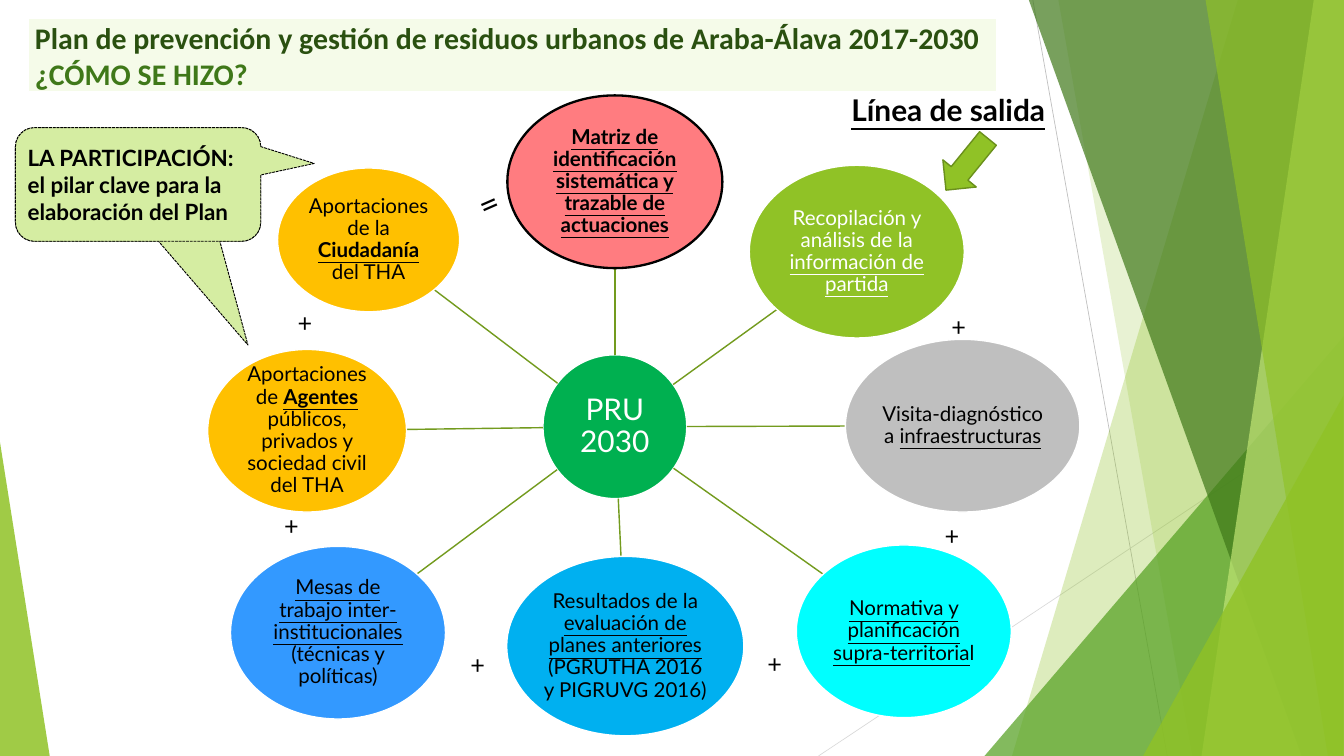
from math import hypot
from typing import NamedTuple

from lxml.etree import SubElement
from pptx import Presentation
from pptx.dml.color import RGBColor
from pptx.enum.dml import MSO_LINE
from pptx.enum.shapes import MSO_CONNECTOR, MSO_SHAPE
from pptx.enum.text import MSO_ANCHOR, MSO_AUTO_SIZE, PP_ALIGN
from pptx.oxml.ns import qn
from pptx.util import Inches, Pt

LIME, BLACK, WHITE = "90C226", "000000", "FFFFFF"


class Node(NamedTuple):
    """An ellipse; runs are (text, style), with b for bold and u for underline."""
    box: tuple
    fill: str
    runs: list
    ink: str = BLACK
    edge: str = WHITE
    width: float = 1.5
    size: int = 22


class Facet(NamedTuple):
    """A translucent part of the backdrop: outline points, or a triangle box."""
    points: list
    fill: str
    alpha: int
    apex: float = -1


HUB = Node((8.08, 5.28, 2.14, 2.14), "00B050", [("PRU 2030", "")], WHITE, size=32)
NODES = [
    Node((7.55, 1.42, 3.2, 2.57), "FF7C80",
         [("Matriz de identificación sistemática y trazable de actuaciones", "bu")],
         edge=BLACK, width=2.5),
    Node((11.15, 2.46, 3.2, 2.57), LIME,
         [("Recopilación y análisis de la ", ""), ("información de partida", "u")], WHITE),
    Node((12.58, 5.05, 3.49, 2.57), "BFBFBF",
         [("Visita-diagnóstico a ", ""), ("infraestructuras", "u")]),
    Node((11.85, 8.11, 3.2, 2.57), "00FFFF",
         [("Normativa y planificación supra-territoria", "u"), ("l", "")]),
    Node((7.54, 8.28, 3.53, 2.67), "00B0F0",
         [("Resultados de la ", ""), ("evaluación de planes anteriores ", "u"),
          ("(PGRUTHA 2016 y PIGRUVG 2016)", "")]),
    Node((3.09, 5.2, 2.96, 2.42), "FFC000",
         [("Aportaciones de ", ""), ("Agentes", "bu"),
          (" públicos, privados y sociedad civil del THA", "")]),
    Node((4.13, 2.5, 2.71, 2.14), "FFC000",
         [("Aportaciones de la ", ""), ("Ciudadanía", "bu"), (" del THA", "")]),
    Node((3.43, 8.13, 3.2, 2.57), "3399FF",
         [("Mesas de trabajo inter-institucionales ", "u"), ("(técnicas y políticas)", "")]),
]
FACETS = [
    Facet([(18.42, 0), (20, 0), (20, 11.25), (15.06, 11.25)], LIME, 30),
    Facet([(15.75, 0), (20, 0), (20, 11.25), (17.74, 11.25)], LIME, 20),
    Facet([14.65, 5, 5.35, 6.25], "54A021", 72, 1),
    Facet([(15.31, 0), (20, 0), (20, 11.25), (19.37, 11.25)], "3F7819", 70),
    Facet([(19.55, 0), (20, 0), (20, 11.25), (17.88, 11.25)], "C0E474", 70),
    Facet([(17.94, 0), (20, 0), (20, 11.25), (19.76, 11.25)], LIME, 65),
    Facet([17.01, 5.89, 2.98, 5.36], LIME, 80, 1),
    Facet([0, 6.58, 0.74, 4.67], LIME, 85, 0),
]
PLUSES = [(14.06, 4.58), (13.96, 7.69), (11.32, 9.6), (6.9, 9.62), (4.13, 7.55), (4.33, 4.53)]


def rgb(code: str) -> RGBColor:
    return RGBColor.from_string(code)


def paint(shape, fill: str, edge: str = "", width: float = 1.5, alpha: int = 100):
    shape.shadow.inherit = False
    shape.fill.solid()
    shape.fill.fore_color.rgb = rgb(fill)
    if alpha < 100:
        tone = shape.fill._xPr.find(qn("a:solidFill"))[0]
        SubElement(tone, qn("a:alpha")).set("val", str(alpha * 1000))
    if edge:
        shape.line.color.rgb = rgb(edge)
        shape.line.width = Pt(width)
    else:
        shape.line.fill.background()
    return shape


def write(shape, *paras, size=22, ink=BLACK, font="Lato", align=PP_ALIGN.LEFT,
          anchor=MSO_ANCHOR.TOP, inset=None, space=None, wrap=True):
    """Fill a shape with paragraphs, each a list of (text, style[, colour]) runs."""
    frame = shape.text_frame
    frame.word_wrap, frame.vertical_anchor = wrap, anchor
    frame.auto_size = MSO_AUTO_SIZE.NONE
    if inset is not None:
        frame.margin_left, frame.margin_top, frame.margin_right, frame.margin_bottom = map(
            Inches, inset)
    for i, runs in enumerate(paras):
        para = frame.add_paragraph() if i else frame.paragraphs[0]
        para.alignment = align
        if space:
            para.line_spacing = space
        for text, style, *tone in runs:
            run = para.add_run()
            run.text = text
            run.font.name, run.font.size = font, Pt(size)
            run.font.bold, run.font.underline = "b" in style, "u" in style
            run.font.color.rgb = rgb(tone[0] if tone else ink)


def add(shapes, kind, box: tuple, *adjust: float):
    shape = shapes.add_shape(kind, *map(Inches, box))
    for i, value in enumerate(adjust):
        shape.adjustments[i] = value
    return shape


def label(shapes, text: str, box: tuple, size: int, style="", turn=0.0, wrap=False):
    area = shapes.add_textbox(*map(Inches, box))
    area.rotation = turn
    write(area, [(text, style)], size=size, wrap=wrap)


def link(shapes, start: tuple, end: tuple, tone: str, width: float):
    line = shapes.add_connector(MSO_CONNECTOR.STRAIGHT, *map(Inches, start + end))
    line.line.color.rgb = rgb(tone)
    line.line.width = Pt(width)
    SubElement(line._element.spPr, qn("a:effectLst"))


def rim(node: Node, goal: Node) -> tuple:
    """Point of a node's edge on the way to the centre of another."""
    x, y, w, h = node.box
    left, top, wide, high = goal.box
    cx, cy = x + w / 2, y + h / 2
    dx, dy = left + wide / 2 - cx, top + high / 2 - cy
    part = 1 / hypot(dx / (w / 2), dy / (h / 2))
    return cx + dx * part, cy + dy * part


def draw_facet(shapes, facet: Facet):
    if facet.apex >= 0:
        shape = add(shapes, MSO_SHAPE.ISOSCELES_TRIANGLE, facet.points, facet.apex)
    else:
        first, *rest = [(Inches(x), Inches(y)) for x, y in facet.points]
        pen = shapes.build_freeform(*first)
        pen.add_line_segments(rest, close=True)
        shape = pen.convert_to_shape()
    paint(shape, facet.fill, alpha=facet.alpha)


def draw_node(shapes, node: Node):
    shape = paint(add(shapes, MSO_SHAPE.OVAL, node.box), node.fill, node.edge, node.width)
    write(shape, node.runs, size=node.size, ink=node.ink, align=PP_ALIGN.CENTER,
          anchor=MSO_ANCHOR.MIDDLE, inset=(0.02,) * 4, space=0.9)


def callout(shapes, *adjust: float):
    shape = add(shapes, MSO_SHAPE.ROUNDED_RECTANGULAR_CALLOUT, (0.23, 1.9, 3.65, 1.69), *adjust)
    paint(shape, "D5EDA2", BLACK, 1)
    shape.line.dash_style = MSO_LINE.SQUARE_DOT
    return shape


def main():
    deck = Presentation()
    deck.slide_width, deck.slide_height = Inches(20), Inches(11.25)
    slide = deck.slides.add_slide(deck.slide_layouts[5])
    shapes = slide.shapes

    # Backdrop
    link(shapes, (15.37, 0), (17.37, 11.25), "BFBFBF", 0.75)
    link(shapes, (20, 6.04), (12.18, 11.25), "D9D9D9", 0.75)
    for facet in FACETS:
        draw_facet(shapes, facet)

    # Title
    title = shapes.title
    title.left, title.top, title.width, title.height = map(Inches, (0.42, 0.28, 14.4, 1.08))
    paint(title, "F5FBE9", WHITE, 0.75)
    write(title,
          [("Plan de prevención y gestión de residuos urbanos de Araba-Álava 2017-2030", "b")],
          [("¿CÓMO SE HIZO?", "b", "3F7819")],
          size=32, ink="2A5010", font="Calibri", anchor=MSO_ANCHOR.BOTTOM, inset=(0.1, 0, 0, 0))

    # Hub, spokes and nodes
    callout(shapes, 0.448, 1.414, 0.167)
    draw_node(shapes, HUB)
    for node in NODES:
        link(shapes, rim(HUB, node), rim(node, HUB), "739B1E", 1.5)
        draw_node(shapes, node)

    # Signs between the nodes
    for spot in PLUSES:
        label(shapes, "+", spot + (0.4, 0.56), 27)
    label(shapes, "=", (7.03, 2.68, 0.47, 0.71), 36, turn=336.4)

    # Starting point
    arrow = paint(add(shapes, MSO_SHAPE.DOWN_ARROW, (14.07, 1.95, 0.64, 0.99)), LIME, "6B901C")
    arrow.rotation = 39.1
    label(shapes, "Línea de salida", (12.57, 1.31, 3.65, 0.64), 32, "bu", wrap=True)

    # Participation note
    write(callout(shapes, 0.718, -0.185, 0.167),
          [("LA PARTICIPACIÓN: el pilar clave para la elaboración del Plan", "b")],
          size=24, anchor=MSO_ANCHOR.MIDDLE)

    deck.save("out.pptx")


if __name__ == "__main__":
    main()
